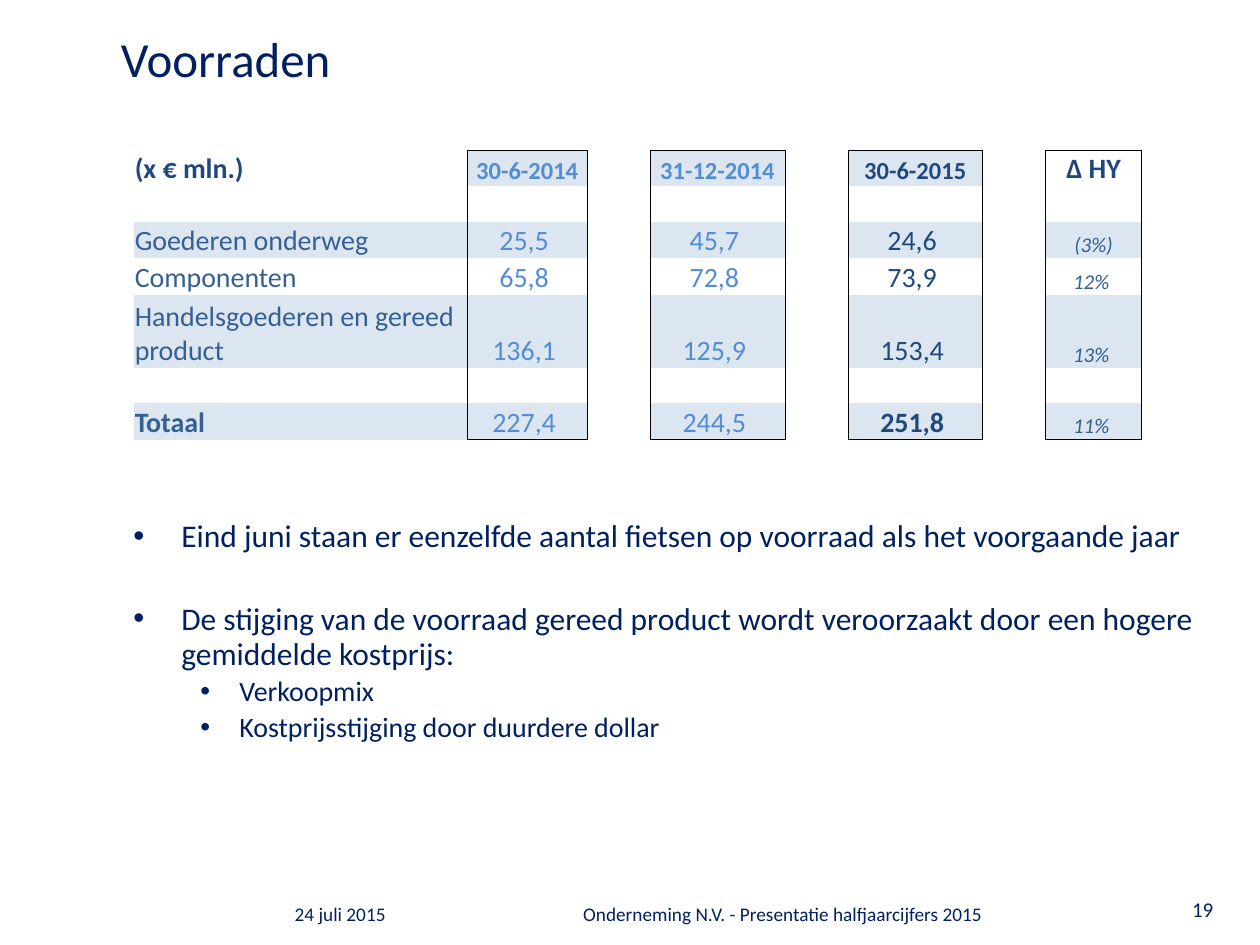
from dataclasses import dataclass

from lxml import etree
from pptx import Presentation
from pptx.dml.color import RGBColor
from pptx.enum.text import MSO_ANCHOR, PP_ALIGN
from pptx.oxml.ns import qn
from pptx.util import Inches, Length, Pt

LEFT, CENTER = PP_ALIGN.LEFT, PP_ALIGN.CENTER
BOTTOM = MSO_ANCHOR.BOTTOM
PLAIN_GRID = "{2D5ABB26-0587-4C30-8999-92F81FD0307C}"


@dataclass(frozen=True)
class Theme:
    font: str = "Calibri"
    navy: str = "002060"
    dark: str = "1F497D"
    steel: str = "366092"
    sky: str = "538DD5"
    band: str = "DCE6F1"
    white: str = "FFFFFF"
    line: str = "000000"
    title: int = 28
    body: int = 18
    large: int = 16
    head: int = 14
    small: int = 12
    foot: int = 11


THEME = Theme()


@dataclass(frozen=True)
class Style:
    size: int
    color: str = THEME.navy
    bold: bool = False
    slant: bool = False


@dataclass(frozen=True)
class Label:
    text: str
    box: tuple[float, float, float, float]
    style: Style
    align: PP_ALIGN = LEFT
    inset: bool = True
    pitch: Length | None = None


@dataclass(frozen=True)
class Point:
    text: str
    size: int
    level: int
    margin: float
    hang: float
    pitch: Length | float
    before: float


LABELS = [
    Label("Voorraden", (0.96, 0.28, 8.76, 0.94), Style(THEME.title), inset=False, pitch=Pt(30)),
    Label("24 juli 2015", (2.24, 7.11, 1.69, 0.33), Style(THEME.foot)),
    Label("Onderneming N.V. - Presentatie halfjaarcijfers 2015",
          (4.53, 7.11, 4.57, 0.33), Style(THEME.foot)),
    Label("19", (9.17, 7.07, 0.75, 0.37), Style(THEME.small), CENTER),
]

POINTS = [
    Point("Eind juni staan er eenzelfde aantal fietsen op voorraad als het voorgaande jaar",
          THEME.body, 0, 0.38, 0.38, Pt(20), 0),
    Point("De stijging van de voorraad gereed product wordt veroorzaakt door een hogere "
          "gemiddelde kostprijs:", THEME.body, 0, 0.38, 0.38, Pt(20), 27.2),
    Point("Verkoopmix", THEME.large, 1, 0.84, 0.31, 0.9, 3.2),
    Point("Kostprijsstijging door duurdere dollar", THEME.large, 1, 0.84, 0.31, 0.9, 3.2),
]

WIDTHS = [2.65, 0.95, 0.5, 1.07, 0.5, 1.07, 0.5, 0.76]
HEIGHTS = [0.29, 0.28, 0.29, 0.29, 0.58, 0.28, 0.29]
DATA_COLS = [0, 1, 3, 5, 7]
ROWS = [
    ["(x € mln.)", "30-6-2014", "31-12-2014", "30-6-2015", "∆ HY"],
    [],
    ["Goederen onderweg", "25,5 ", "45,7 ", "24,6 ", "(3%)"],
    ["Componenten", "65,8 ", "72,8 ", "73,9 ", "12% "],
    ["Handelsgoederen en gereed product", "136,1 ", "125,9 ", "153,4 ", "13% "],
    [],
    ["Totaal", "227,4 ", "244,5 ", "251,8 ", "11% "],
]
LAST = len(ROWS) - 1


def add_run(para, text: str, style: Style) -> None:
    run = para.add_run()
    run.text = text
    font = run.font
    font.name, font.size = THEME.font, Pt(style.size)
    font.bold, font.italic = style.bold, style.slant
    font.color.rgb = RGBColor.from_string(style.color)


def add_frame(slide, box: tuple[float, float, float, float], inset: bool):
    frame = slide.shapes.add_textbox(*map(Inches, box)).text_frame
    frame.word_wrap = True
    if not inset:
        frame.margin_left = frame.margin_right = 0
        frame.margin_top = frame.margin_bottom = 0
    return frame


def add_label(slide, label: Label) -> None:
    para = add_frame(slide, label.box, label.inset).paragraphs[0]
    para.alignment = label.align
    if label.pitch:
        para.line_spacing = label.pitch
    add_run(para, label.text, label.style)


def add_points(slide, points: list[Point]) -> None:
    frame = add_frame(slide, (1.06, 4.12, 8.76, 2.55), False)
    for i, point in enumerate(points):
        para = frame.add_paragraph() if i else frame.paragraphs[0]
        para.level = point.level
        props = para._p.get_or_add_pPr()
        props.set("marL", str(Inches(point.margin)))
        props.set("indent", str(-Inches(point.hang)))
        etree.SubElement(props, qn("a:buFont"), typeface="Arial")
        etree.SubElement(props, qn("a:buChar"), char="•")
        para.line_spacing = point.pitch
        if i:
            para.space_before = Pt(point.before)
        add_run(para, point.text, Style(point.size))


def cell_style(row: int, col: int) -> Style:
    if row == 0:
        size = THEME.large if col in (0, 7) else THEME.head
        return Style(size, THEME.sky if col in (1, 3) else THEME.dark, bold=True)
    if col == 7:
        return Style(THEME.small, THEME.steel, slant=True)
    color = {0: THEME.steel, 5: THEME.dark}.get(col, THEME.sky)
    return Style(THEME.large, color, bold=row == LAST and col in (0, 5))


def cell_fill(row: int, col: int) -> str:
    plain = row % 2 or col not in DATA_COLS or (row == 0 and col in (0, 7))
    return THEME.white if plain else THEME.band


def cell_sides(row: int, col: int) -> str:
    """Box each figure column; its neighbours share the upright lines."""
    boxed = col % 2 == 1
    return (("L" if col else "") + "R" + ("T" if boxed and row == 0 else "")
            + ("B" if boxed and row == LAST else ""))


def draw_sides(cell, sides: str) -> None:
    props = cell._tc.get_or_add_tcPr()
    for side in sides:
        line = etree.SubElement(props, qn(f"a:ln{side}"), w=str(Pt(0.5)))
        fill = etree.SubElement(line, qn("a:solidFill"))
        etree.SubElement(fill, qn("a:srgbClr"), val=THEME.line)


def fill_cell(cell, row: int, col: int, text: str) -> None:
    draw_sides(cell, cell_sides(row, col))
    cell.fill.solid()
    cell.fill.fore_color.rgb = RGBColor.from_string(cell_fill(row, col))
    cell.vertical_anchor = BOTTOM
    cell.margin_left = cell.margin_right = cell.margin_top = Inches(0.01)
    cell.margin_bottom = 0
    para = cell.text_frame.paragraphs[0]
    if text:
        para.alignment = CENTER if col else LEFT
        add_run(para, text, cell_style(row, col))
    else:
        etree.SubElement(para._p, qn("a:endParaRPr"), sz=str(THEME.small * 100))


def add_stock(slide) -> None:
    box = map(Inches, (1.06, 1.19, sum(WIDTHS), sum(HEIGHTS)))
    table = slide.shapes.add_table(len(HEIGHTS), len(WIDTHS), *box).table
    table.first_row = table.horz_banding = False
    table._tbl.tblPr.find(qn("a:tableStyleId")).text = PLAIN_GRID
    for col, width in zip(table.columns, WIDTHS):
        col.width = Inches(width)
    for r, (height, texts) in enumerate(zip(HEIGHTS, ROWS)):
        table.rows[r].height = Inches(height)
        by_col = dict(zip(DATA_COLS, texts))
        for c in range(len(WIDTHS)):
            fill_cell(table.cell(r, c), r, c, by_col.get(c, ""))


def main() -> None:
    deck = Presentation()
    deck.slide_width, deck.slide_height = Inches(10), Inches(7.5)
    slide = deck.slides.add_slide(deck.slide_layouts[6])
    for label in LABELS:
        add_label(slide, label)
    add_points(slide, POINTS)
    add_stock(slide)
    deck.save("out.pptx")


if __name__ == "__main__":
    main()
